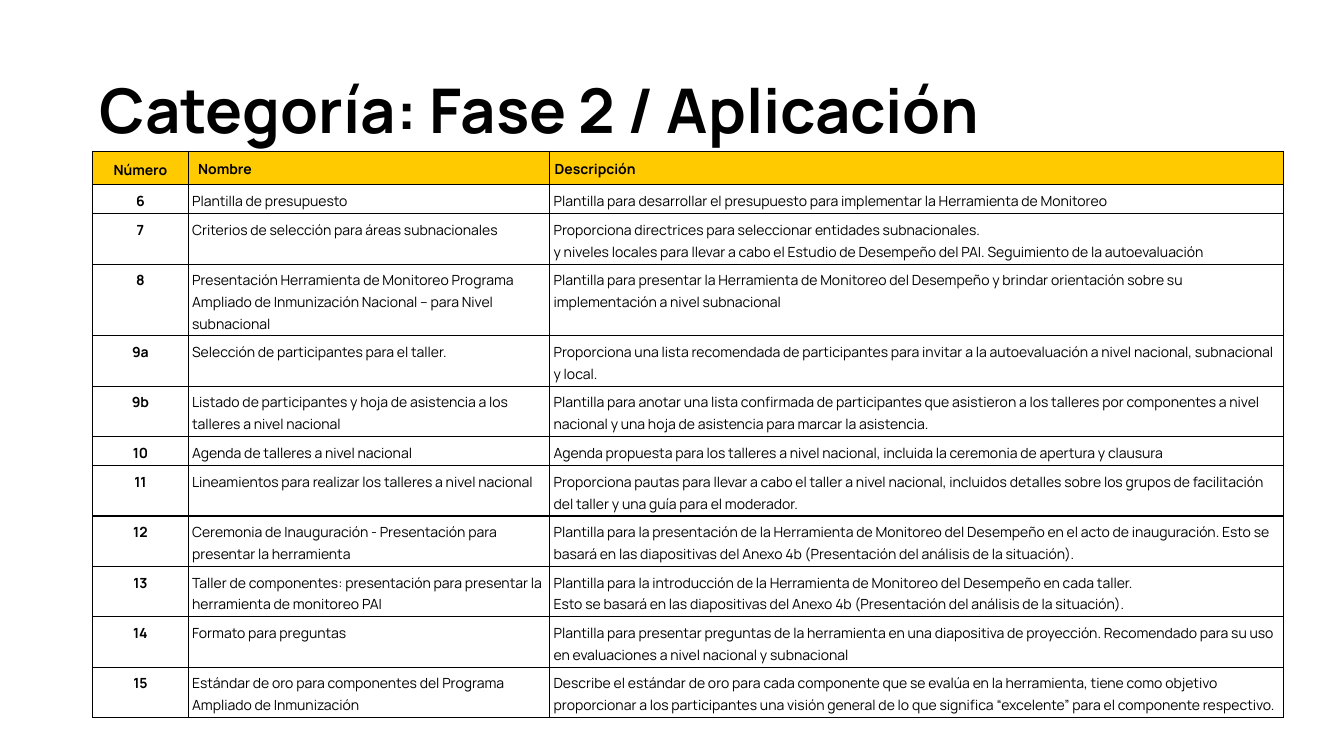
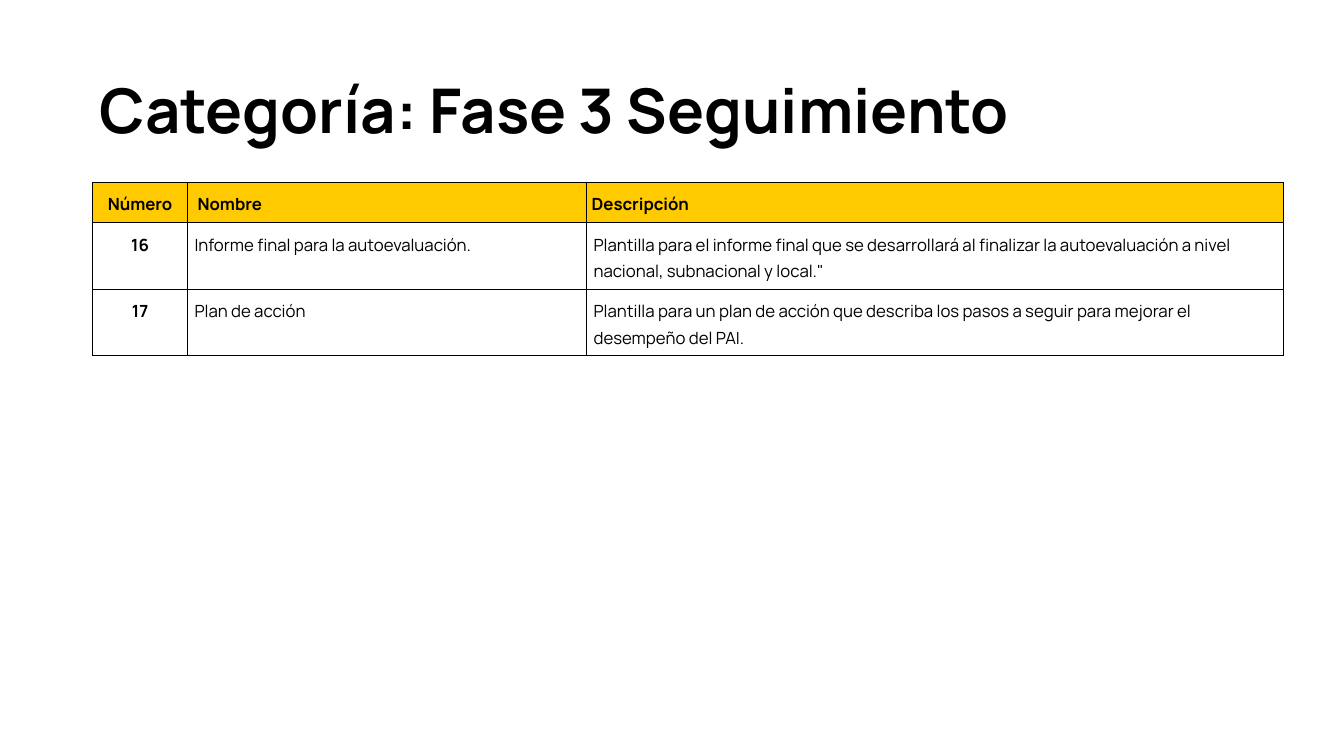
"""Build the two tool-catalogue slides, each a title over a bordered table."""
from dataclasses import dataclass

from lxml.etree import SubElement
from pptx import Presentation
from pptx.dml.color import RGBColor
from pptx.enum.text import MSO_ANCHOR, PP_ALIGN
from pptx.oxml.ns import qn
from pptx.util import Inches, Pt


@dataclass(frozen=True)
class Theme:
    """Hold the colours, type, and page grid of the deck."""
    wide: float = 13.33
    high: float = 7.5
    left: float = 6.9
    span: float = 88.6
    font: str = "Manrope"
    ink: str = "000000"
    gold: str = "FFCB00"
    paper: str = "FFFFFF"
    title: int = 44
    lead: float = 1.15
    rule: int = 1


@dataclass(frozen=True)
class Grid:
    """Hold one table's measures: shares in percent, padding in inches."""
    top: float
    cols: tuple
    head: float
    line: float
    pad: float
    size: int


THEME = Theme()
HEADS = ("Número", "Nombre", "Descripción")
HEAD_PADS = ((0.07, 0.07), (0.1, 0.05), (0.05, 0.05))

APPLY = Grid(top=20, cols=(7.1, 26.9), head=4.4, line=2.8, pad=0.04, size=10)
FOLLOW = Grid(top=24.13, cols=(7.05, 29.7), head=5.33, line=3.47, pad=0.07, size=12)

APPLY_ROWS = (
    (1, "6", "Plantilla de presupuesto",
     "Plantilla para desarrollar el presupuesto para implementar la Herramienta de Monitoreo"),
    (2, "7", "Criterios de selección para áreas subnacionales",
     "Proporciona directrices para seleccionar entidades subnacionales.\n"
     "y niveles locales para llevar a cabo el Estudio de Desempeño del PAI. "
     "Seguimiento de la autoevaluación"),
    (3, "8", "Presentación Herramienta de Monitoreo Programa Ampliado de Inmunización "
     "Nacional – para Nivel subnacional",
     "Plantilla para presentar la Herramienta de Monitoreo del Desempeño y brindar "
     "orientación sobre su implementación a nivel subnacional"),
    (2, "9a", "Selección de participantes para el taller.",
     "Proporciona una lista recomendada de participantes para invitar a la "
     "autoevaluación a nivel nacional, subnacional y local."),
    (2, "9b", "Listado de participantes y hoja de asistencia a los talleres a nivel nacional",
     "Plantilla para anotar una lista confirmada de participantes que asistieron a los "
     "talleres por componentes a nivel nacional y una hoja de asistencia para marcar "
     "la asistencia."),
    (1, "10", "Agenda de talleres a nivel nacional",
     "Agenda propuesta para los talleres a nivel nacional, incluida la ceremonia de "
     "apertura y clausura"),
    (2, "11", "Lineamientos para realizar los talleres a nivel nacional",
     "Proporciona pautas para llevar a cabo el taller a nivel nacional, incluidos "
     "detalles sobre los grupos de facilitación del taller y una guía para el moderador."),
    (2, "12", "Ceremonia de Inauguración - Presentación para presentar la herramienta",
     "Plantilla para la presentación de la Herramienta de Monitoreo del Desempeño en el "
     "acto de inauguración. Esto se basará en las diapositivas del Anexo 4b "
     "(Presentación del análisis de la situación)."),
    (2, "13", "Taller de componentes: presentación para presentar la herramienta de "
     "monitoreo PAI",
     "Plantilla para la introducción de la Herramienta de Monitoreo del Desempeño en "
     "cada taller.\n"
     "Esto se basará en las diapositivas del Anexo 4b (Presentación del análisis de la "
     "situación)."),
    (2, "14", "Formato para preguntas",
     "Plantilla para presentar preguntas de la herramienta en una diapositiva de "
     "proyección. Recomendado para su uso en evaluaciones a nivel nacional y subnacional"),
    (2, "15", "Estándar de oro para componentes del Programa Ampliado de Inmunización",
     "Describe el estándar de oro para cada componente que se evalúa en la herramienta, "
     "tiene como objetivo proporcionar a los participantes una visión general de lo que "
     "significa “excelente” para el componente respectivo."),
)

FOLLOW_ROWS = (
    (2, "16", "Informe final para la autoevaluación.",
     "Plantilla para el informe final que se desarrollará al finalizar la "
     "autoevaluación a nivel nacional, subnacional y local.\""),
    (2, "17", "Plan de acción",
     "Plantilla para un plan de acción que describa los pasos a seguir para mejorar el "
     "desempeño del PAI."),
)


def across(share):
    """Turn a percentage of the slide's width into a length."""
    return Inches(THEME.wide * share / 100)


def down(share):
    """Turn a percentage of the slide's height into a length."""
    return Inches(THEME.high * share / 100)


def inset(box, side, edge):
    """Set the inner margins of a cell or a text frame."""
    box.margin_left = box.margin_right = Inches(side)
    box.margin_top = box.margin_bottom = Inches(edge)


def style(frame, size, bold, lead, align=PP_ALIGN.LEFT):
    """Give every paragraph of a frame the deck's type."""
    for para in frame.paragraphs:
        para.alignment = align
        para.line_spacing = lead
        para.font.name = THEME.font
        para.font.size = Pt(size)
        para.font.bold = bold
        para.font.color.rgb = RGBColor.from_string(THEME.ink)


def border(cell):
    """Draw a solid rule on the four sides of a cell."""
    props = cell._tc.get_or_add_tcPr()
    for side in ("lnL", "lnR", "lnT", "lnB"):
        line = SubElement(props, qn(f"a:{side}"), w=str(Pt(THEME.rule)))
        fill = SubElement(line, qn("a:solidFill"))
        SubElement(fill, qn("a:srgbClr"), val=THEME.ink)


def write(cell, text, size, pads, bold, align, fill):
    """Fill one table cell with text, padding, rules, and colour."""
    cell.text = text
    inset(cell, *pads)
    style(cell.text_frame, size, bold, THEME.lead, align)
    border(cell)
    cell.fill.solid()
    cell.fill.fore_color.rgb = RGBColor.from_string(fill)


def add_title(slide, text):
    """Place the slide's title."""
    box = slide.shapes.add_textbox(across(THEME.left), down(5.33), across(90.1), down(19.33))
    frame = box.text_frame
    frame.word_wrap = True
    frame.vertical_anchor = MSO_ANCHOR.MIDDLE
    frame.text = text
    inset(frame, 0.07, 0.04)
    style(frame, THEME.title, True, 0.9)


def add_grid(slide, grid, rows):
    """Place a table with a gold head row and one row for each tool."""
    pad = 200 * grid.pad / THEME.high
    highs = [grid.head] + [lines * grid.line + pad for lines, *_ in rows]
    wides = [*grid.cols, THEME.span - sum(grid.cols)]
    table = slide.shapes.add_table(
        len(highs), len(wides), across(THEME.left), down(grid.top),
        across(THEME.span), down(sum(highs))).table
    table.horz_banding = False
    for col, wide in zip(table.columns, wides):
        col.width = across(wide)
    for row, high in zip(table.rows, highs):
        row.height = down(high)
    texts = [HEADS] + [row[1:] for row in rows]
    for i, row in enumerate(texts):
        for j, text in enumerate(row):
            cell = table.cell(i, j)
            head = i == 0
            pads = HEAD_PADS[j] if head else (grid.pad, grid.pad)
            align = PP_ALIGN.LEFT if j else PP_ALIGN.CENTER
            fill = THEME.gold if head else THEME.paper
            write(cell, text, grid.size, pads, head or j == 0, align, fill)
            cell.vertical_anchor = MSO_ANCHOR.MIDDLE if head else MSO_ANCHOR.TOP


def main():
    """Build and save the deck."""
    deck = Presentation()
    deck.slide_width, deck.slide_height = across(100), down(100)
    pages = (
        ("Categoría: Fase 2 / Aplicación", APPLY, APPLY_ROWS),
        ("Categoría: Fase 3 Seguimiento", FOLLOW, FOLLOW_ROWS),
    )
    for title, grid, rows in pages:
        slide = deck.slides.add_slide(deck.slide_layouts[6])
        add_title(slide, title)
        add_grid(slide, grid, rows)
    deck.save("out.pptx")


if __name__ == "__main__":
    main()
